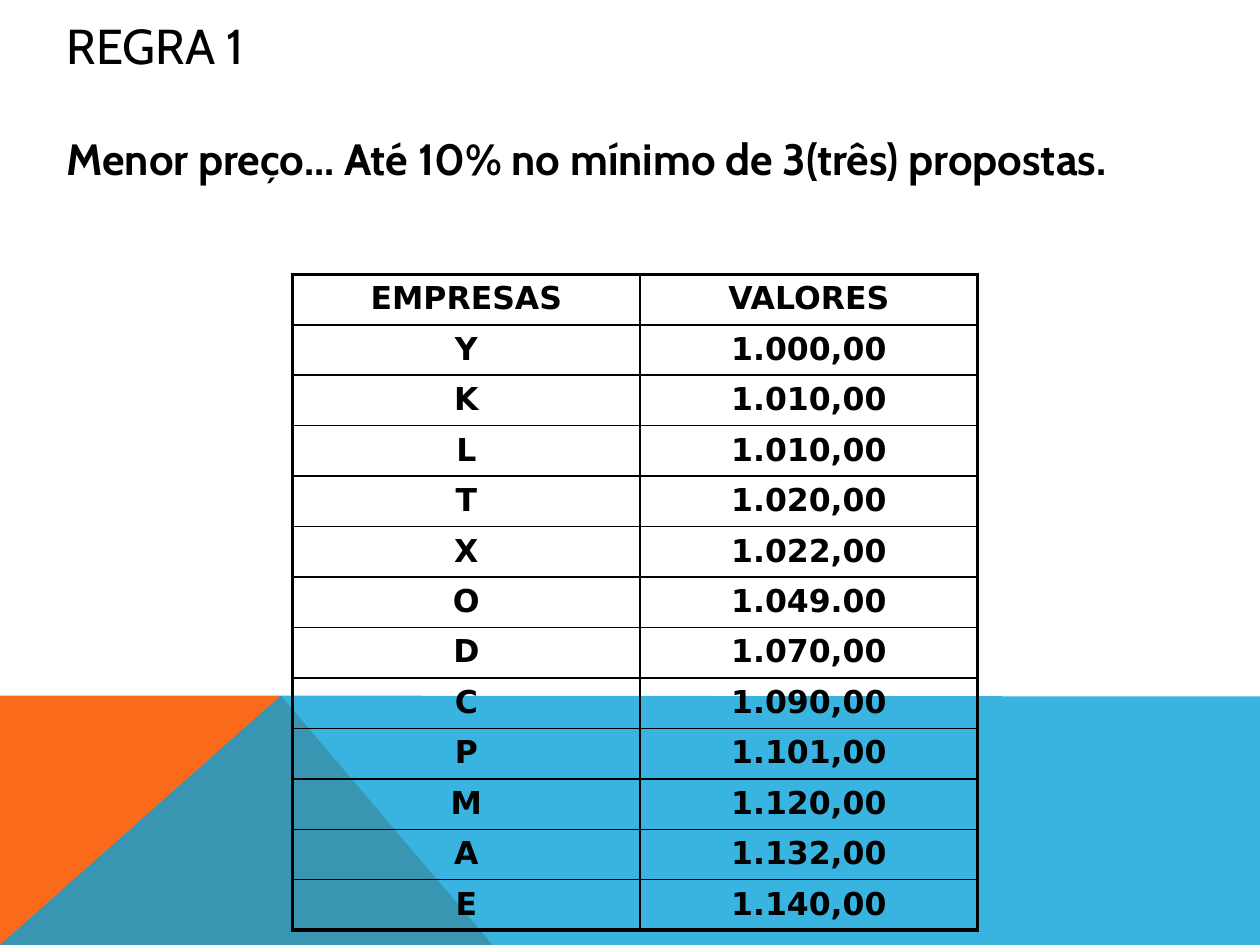
"""Build the slide on rule 1: lowest price, with the table of bids."""
from lxml.etree import SubElement as Sub
from pptx import Presentation
from pptx.dml.color import RGBColor
from pptx.enum.text import MSO_ANCHOR as Anchor, PP_ALIGN as Align
from pptx.oxml.ns import qn
from pptx.util import Pt

WIDE, HIGH = 720, 540
BLACK = "000000"
BANDS = [
    ("F96A1B", 100, [(0, 540), (0, 397.5), (160.5, 397.5), (281.5, 540)]),
    ("08A1D9", 80, [(0, 540), (160.5, 397.5), (720, 398), (720, 540)]),
]
TEXTS = [
    ("REGRA 1", 28, False, (31, -19.5, 648, 90), Anchor.MIDDLE),
    ("Menor preço... Até 10% no mínimo de 3(três) propostas.", 25, True,
     (31, 71.5, 648, 98.5), Anchor.TOP),
]
BIDS = [
    ("EMPRESAS", "VALORES"), ("Y", "1.000,00"), ("K", "1.010,00"),
    ("L", "1.010,00"), ("T", "1.020,00"), ("X", "1.022,00"),
    ("O", "1.049.00"), ("D", "1.070,00"), ("C", "1.090,00"),
    ("P", "1.101,00"), ("M", "1.120,00"), ("A", "1.132,00"),
    ("E", "1.140,00"),
]
LEFT, TOP, ROW = 167.25, 156.75, 28.13
COLS = [198.5, 193]
THICK, THIN = 2.25, 1


def paint(color, tone):
    color.rgb = RGBColor.from_string(tone)


def band(slide, tone, alpha, points):
    pen = slide.shapes.build_freeform(*map(Pt, points[0]), scale=1)
    pen.add_line_segments([(Pt(x), Pt(y)) for x, y in points[1:]], close=True)
    shape = pen.convert_to_shape()
    shape.shadow.inherit = False
    shape.fill.solid()
    paint(shape.fill.fore_color, tone)
    shape.line.fill.background()
    if alpha < 100:
        hue = shape.fill._xPr.find(".//" + qn("a:srgbClr"))
        Sub(hue, qn("a:alpha"), val=str(alpha * 1000))


def write(para, text, size, face, bold):
    run = para.add_run()
    run.text = text
    run.font.size, run.font.name, run.font.bold = Pt(size), face, bold
    paint(run.font.color, BLACK)


def label(slide, text, size, bold, box, anchor):
    frame = slide.shapes.add_textbox(*map(Pt, box)).text_frame
    frame.word_wrap = True
    frame.vertical_anchor = anchor
    write(frame.paragraphs[0], text, size, "Cabin", bold)


def edge(cell, sides):
    props = cell._tc.get_or_add_tcPr()
    for spot, (side, outer) in enumerate(sides.items()):
        line = props.makeelement(
            qn("a:ln" + side), {"w": str(Pt(THICK if outer else THIN))})
        Sub(Sub(line, qn("a:solidFill")), qn("a:srgbClr"), val=BLACK)
        props.insert(spot, line)


def grid(slide):
    count = len(BIDS)
    frame = slide.shapes.add_table(
        count, len(COLS), Pt(LEFT), Pt(TOP), Pt(sum(COLS)), Pt(ROW * count))
    table = frame.table
    table.first_row = table.horz_banding = False
    for col, width in zip(table.columns, COLS):
        col.width = Pt(width)
    for r, bid in enumerate(BIDS):
        table.rows[r].height = Pt(ROW)
        for c, text in enumerate(bid):
            cell = table.cell(r, c)
            cell.fill.background()
            para = cell.text_frame.paragraphs[0]
            para.alignment = Align.CENTER
            write(para, text, 18, "DejaVu Sans", True)
            edge(cell, {"L": c == 0, "R": c == len(COLS) - 1,
                        "T": r == 0, "B": r == count - 1})


def main():
    deck = Presentation()
    deck.slide_width, deck.slide_height = Pt(WIDE), Pt(HIGH)
    slide = deck.slides.add_slide(deck.slide_layouts[6])
    for item in BANDS:
        band(slide, *item)
    for item in TEXTS:
        label(slide, *item)
    grid(slide)
    deck.save("out.pptx")


if __name__ == "__main__":
    main()
